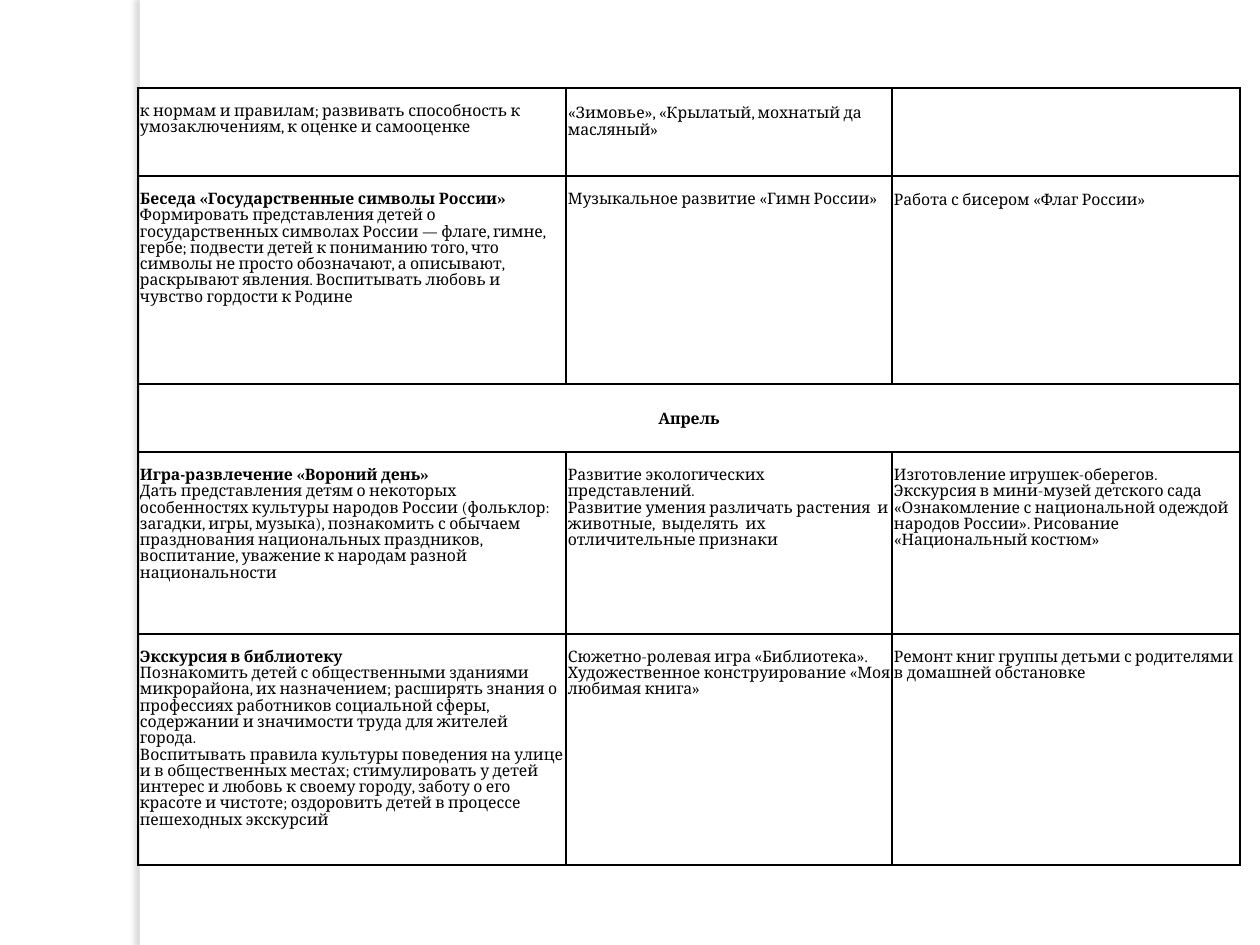
from dataclasses import dataclass

from lxml.etree import SubElement
from pptx import Presentation
from pptx.dml.color import RGBColor
from pptx.enum.shapes import MSO_SHAPE as Shape
from pptx.enum.text import MSO_ANCHOR as Anchor, PP_ALIGN as Align
from pptx.oxml.ns import qn
from pptx.util import Emu, Pt


@dataclass(frozen=True)
class Theme:
    """Colours, font and type sizes of the plan."""
    ink: str = "000000"
    paper: str = "FFFFFF"
    shade: str = "7A7276"
    font: str = "Cambria"
    size: float = 9
    leading: float = 9.3
    border: float = 1


THEME = Theme()
COLUMNS = [428, 326, 348]
ROWS = [88, 208, 68, 182, 231]
MONTH = "Апрель"
MONTH_ROW = 2
LEADINGS = {(0, 1): 9.8, (1, 2): 9.6}
ACTIVITIES = {
    0: ("",
        ["к нормам и правилам; развивать способность к умозаключениям, к оценке и самооценке"],
        ["«Зимовье», «Крылатый, мохнатый да масляный»"],
        []),
    1: ("Беседа «Государственные символы России»",
        ["Формировать представления детей о государственных символах России — флаге, гимне, "
         "гербе; подвести детей к пониманию того, что символы не просто обозначают, а "
         "описывают, раскрывают явления. Воспитывать любовь и чувство гордости к Родине"],
        ["Музыкальное развитие «Гимн России»"],
        ["Работа с бисером «Флаг России»"]),
    3: ("Игра-развлечение «Вороний день»",
        ["Дать представления детям о некоторых особенностях культуры народов России "
         "(фольклор: загадки, игры, музыка), познакомить с обычаем празднования "
         "национальных праздников, воспитание, уважение к народам разной национальности"],
        ["Развитие экологических представлений.",
         "Развитие умения различать растения  и животные,  выделять  их отличительные признаки"],
        ["Изготовление игрушек-оберегов. Экскурсия в мини-музей детского сада «Ознакомление "
         "с национальной одеждой народов России». Рисование «Национальный костюм»"]),
    4: ("Экскурсия в библиотеку",
        ["Познакомить детей с общественными зданиями микрорайона, их назначением; расширять "
         "знания о профессиях работников социальной сферы, содержании и значимости труда "
         "для жителей города.",
         "Воспитывать правила культуры поведения на улице и в общественных местах; "
         "стимулировать у детей интерес и любовь к своему городу, заботу о его красоте и "
         "чистоте; оздоровить детей в процессе пешеходных экскурсий"],
        ["Сюжетно-ролевая игра «Библиотека».",
         "Художественное конструирование «Моя любимая книга»"],
        ["Ремонт книг группы детьми с родителями в домашней обстановке"]),
}


def px(length):
    """Turn pixels into EMU."""
    return Emu(round(length * 914400 / 126))


def add_page_edge(slide, left, top, width, height):
    """Draw the page edge with its soft shadow to the left."""
    edge = slide.shapes.add_shape(Shape.RECTANGLE, px(left), px(top), px(width), px(height))
    edge.shadow.inherit = False
    edge.fill.solid()
    edge.fill.fore_color.rgb = RGBColor.from_string(THEME.paper)
    edge.line.fill.background()
    effects = edge.element.spPr.find(qn("a:effectLst"))
    shadow = SubElement(effects, qn("a:outerShdw"), blurRad=str(Pt(3)), dist=str(Pt(3)),
                        dir="10800000", rotWithShape="0")
    tint = SubElement(shadow, qn("a:srgbClr"), val=THEME.shade)
    SubElement(tint, qn("a:alpha"), val="25000")


def style_cell(cell):
    """Give a cell its margins, borders and clear fill."""
    cell.margin_left = cell.margin_right = px(2)
    cell.margin_top = cell.margin_bottom = 0
    properties = cell._tc.get_or_add_tcPr()
    for side in ("lnL", "lnR", "lnT", "lnB"):
        border = SubElement(properties, qn(f"a:{side}"), w=str(Pt(THEME.border)))
        ink = SubElement(border, qn("a:solidFill"))
        SubElement(ink, qn("a:srgbClr"), val=THEME.ink)
    cell.fill.background()


def write_cell(cell, lines, title="", leading=THEME.leading, align=Align.LEFT):
    """Write an optional bold title and the lines of a cell."""
    texts = ([title] if title else []) + lines
    cell.text = "\n".join(texts)
    for paragraph in cell.text_frame.paragraphs:
        paragraph.alignment = align
        paragraph.line_spacing = Pt(leading)
        font = paragraph.font
        font.name, font.size = THEME.font, Pt(THEME.size)
        font.color.rgb = RGBColor.from_string(THEME.ink)
        font.bold = False
    if title:
        cell.text_frame.paragraphs[0].font.bold = True


def add_plan(slide, left, top):
    """Place the table of activities at the given corner."""
    plan = slide.shapes.add_table(len(ROWS), len(COLUMNS), px(left), px(top),
                                  px(sum(COLUMNS)), px(sum(ROWS))).table
    plan.first_row = plan.horz_banding = False
    for column, width in zip(plan.columns, COLUMNS):
        column.width = px(width)
    for row, height in zip(plan.rows, ROWS):
        row.height = px(height)
    for cell in plan.iter_cells():
        style_cell(cell)
    for row, (title, *columns) in ACTIVITIES.items():
        for column, lines in enumerate(columns):
            if lines:
                cell = plan.cell(row, column)
                leading = LEADINGS.get((row, column), THEME.leading)
                write_cell(cell, lines, "" if column else title, leading)
                cell.margin_top = Pt(leading)
    month = plan.cell(MONTH_ROW, 0)
    month.merge(plan.cell(MONTH_ROW, len(COLUMNS) - 1))
    write_cell(month, [], MONTH, align=Align.CENTER)
    month.vertical_anchor = Anchor.MIDDLE
    month.margin_top = px(4)


def main():
    """Build the slide and save it."""
    deck = Presentation()
    deck.slide_width, deck.slide_height = px(1260), px(945)
    slide = deck.slides.add_slide(deck.slide_layouts[6])
    add_page_edge(slide, 140, 0, 10, 945)
    add_plan(slide, 138, 88)
    deck.save("out.pptx")


if __name__ == "__main__":
    main()
